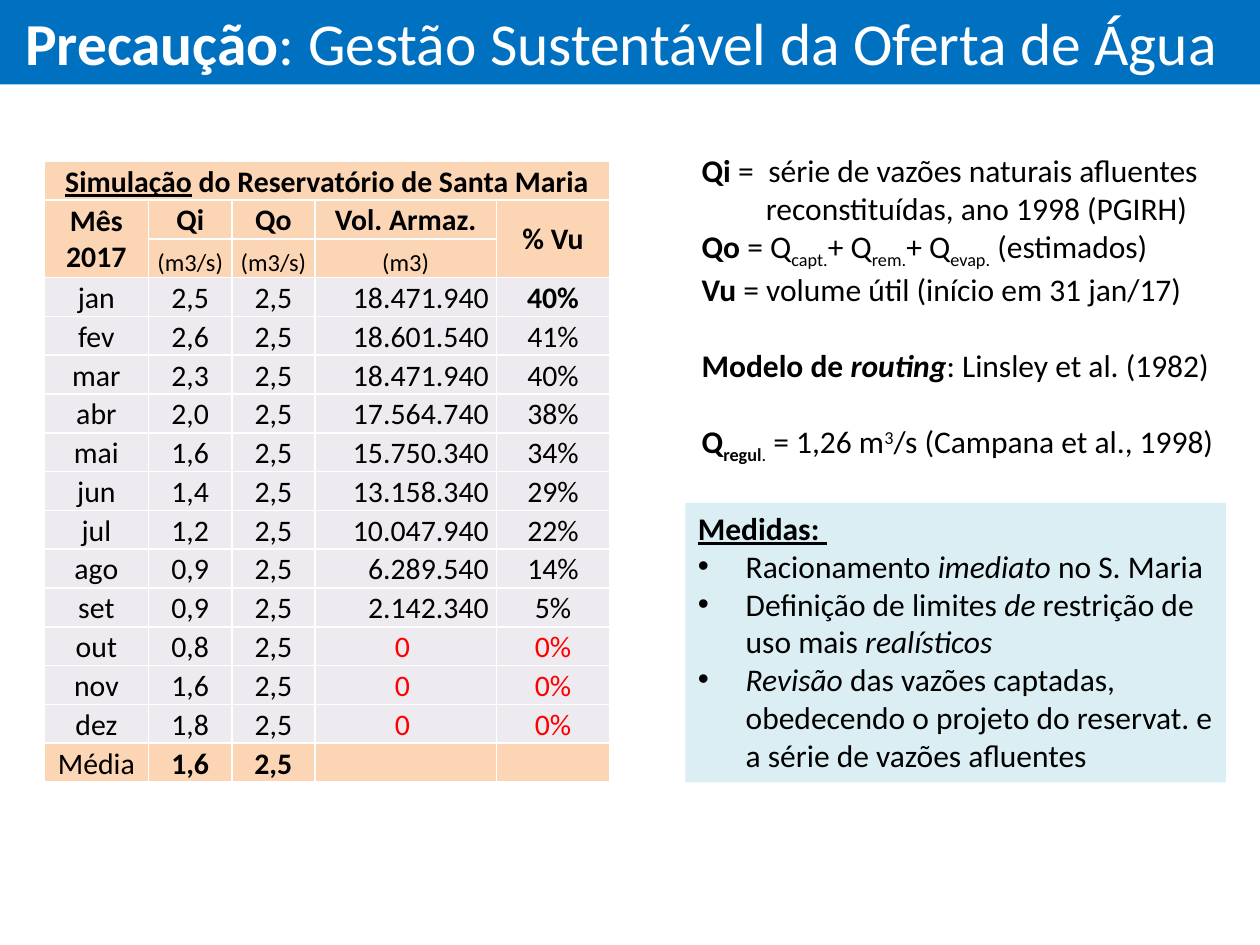
"""Build the slide on sustainable management of the water supply."""
from lxml.etree import SubElement
from pptx import Presentation
from pptx.dml.color import RGBColor
from pptx.enum.shapes import MSO_SHAPE
from pptx.enum.text import MSO_ANCHOR, PP_ALIGN
from pptx.oxml.ns import qn
from pptx.util import Inches, Pt

FONT = "Calibri"
COLORS = {"title": "0070C0", "head": "FCD5B5", "body": "EDEAF0", "measures": "DBEEF4",
          "white": "FFFFFF", "black": "000000", "red": "FF0000"}
BASELINES = {"v": "-25000", "^": "30000"}

# Run styles: b bold, i italic, u underline, v subscript, ^ superscript
TITLE = [("Precaução", "b"), (": Gestão Sustentável da Oferta de Água", "")]
NOTES = [
    {"runs": [("Qi ", "b"), ("=\tsérie de vazões naturais afluentes", "")],
     "margin": 0.53, "indent": -0.53},
    {"runs": [("reconstituídas, ano 1998 (PGIRH)", "")], "margin": 0.51},
    {"runs": [("Qo ", "b"), ("= Q", ""), ("capt.", "v"), ("+ Q", ""), ("rem.", "v"),
              ("+ Q", ""), ("evap.", "v"), (" (estimados)", "")]},
    {"runs": [("Vu", "b"), (" = volume útil (início em 31 jan/17)", "")]},
    {"runs": [("Modelo de ", "b"), ("routing", "bi"), (": Linsley et al. (1982)", "")],
     "before": 22},
    {"runs": [("Q", "b"), ("regul", "bv"), (".", "v"), (" = 1,26 m", ""), ("3", "^"),
              ("/s (Campana et al., 1998)", "")], "before": 22},
]
MEASURES_HEADING = [("Medidas: ", "bu")]
MEASURES = [
    [("Racionamento ", ""), ("imediato ", "i"), ("no S. Maria", "")],
    [("Definição de limites ", ""), ("de ", "i"), ("restrição de uso mais ", ""),
     ("realísticos", "i")],
    [("Revisão", "i"), (" das vazões captadas, obedecendo o projeto do reservat. e "
                        "a série de vazões afluentes", "")],
]
TABLE_TITLE = [("Simulação", "bu"), (" do Reservatório de Santa Maria", "b")]
HEADINGS = ["Mês 2017", "Qi", "Qo", "Vol. Armaz.", "% Vu"]
UNITS = ["", "(m3/s)", "(m3/s)", "(m3)", ""]
OUTFLOW = "2,5"
MONTHS = [
    ("jan", "2,5", "18.471.940", "40%"), ("fev", "2,6", "18.601.540", "41%"),
    ("mar", "2,3", "18.471.940", "40%"), ("abr", "2,0", "17.564.740", "38%"),
    ("mai", "1,6", "15.750.340", "34%"), ("jun", "1,4", "13.158.340", "29%"),
    ("jul", "1,2", "10.047.940", "22%"), ("ago", "0,9", "6.289.540", "14%"),
    ("set", "0,9", "2.142.340", "5%"), ("out", "0,8", "0", "0%"),
    ("nov", "1,6", "0", "0%"), ("dez", "1,8", "0", "0%"),
]
AVERAGES = ["Média", "1,6", OUTFLOW, "", ""]
COL_WIDTHS = [0.83, 0.66, 0.66, 1.44, 0.9]
TABLE_BOX = (0.35, 1.28, 4.49, 4.93)


def rgb(name):
    return RGBColor.from_string(COLORS[name])


def write(p, runs, size, color="black", align=PP_ALIGN.LEFT, margin=0, indent=0, before=0):
    p.alignment = align
    p.space_before = Pt(before)
    pPr = p._p.get_or_add_pPr()
    pPr.set("marL", str(Inches(margin)))
    pPr.set("indent", str(Inches(indent)))
    for text, style in runs:
        r = p.add_run()
        r.text = text
        f = r.font
        f.name, f.size, f.color.rgb = FONT, Pt(size), rgb(color)
        f.bold, f.italic, f.underline = (key in style for key in "biu")
        for key, baseline in BASELINES.items():
            if key in style:
                r._r.get_or_add_rPr().set("baseline", baseline)


def add_panel(s, box, fill):
    sp = s.shapes.add_shape(MSO_SHAPE.RECTANGLE, *map(Inches, box))
    sp.shadow.inherit = False
    sp.fill.solid()
    sp.fill.fore_color.rgb = rgb(fill)
    sp.line.fill.background()
    tf = sp.text_frame
    tf.word_wrap = True
    tf.vertical_anchor = MSO_ANCHOR.TOP
    return tf


def next_paragraph(tf, i):
    return tf.add_paragraph() if i else tf.paragraphs[0]


def style_cell(cell, fill):
    cell.margin_left = cell.margin_right = cell.margin_top = Inches(0.01)
    cell.margin_bottom = 0
    cell.vertical_anchor = MSO_ANCHOR.BOTTOM
    tcPr = cell._tc.get_or_add_tcPr()
    for side in ("lnL", "lnR", "lnT", "lnB"):
        ln = SubElement(tcPr, qn(f"a:{side}"), w=str(Pt(1)))
        SubElement(SubElement(ln, qn("a:solidFill")), qn("a:srgbClr"), val=COLORS["white"])
    cell.fill.solid()
    cell.fill.fore_color.rgb = rgb(fill)


def write_cell(cell, text, size=17, style="", **options):
    options.setdefault("align", PP_ALIGN.CENTER)
    write(cell.text_frame.paragraphs[0], [(text, style)], size, **options)


def add_simulation(s):
    n_rows = len(MONTHS) + 4
    tbl = s.shapes.add_table(n_rows, len(COL_WIDTHS), *map(Inches, TABLE_BOX)).table
    tbl.first_row = tbl.horz_banding = False
    for col, width in zip(tbl.columns, COL_WIDTHS):
        col.width = Inches(width)
    for i, row in enumerate(tbl.rows):
        row.height = Inches(TABLE_BOX[3] / n_rows)
        for cell in row.cells:
            style_cell(cell, "body" if 3 <= i < n_rows - 1 else "head")

    tbl.cell(0, 0).merge(tbl.cell(0, 4))
    write(tbl.cell(0, 0).text_frame.paragraphs[0], TABLE_TITLE, 17, align=PP_ALIGN.CENTER)
    for j, (heading, unit) in enumerate(zip(HEADINGS, UNITS)):
        cell = tbl.cell(1, j)
        write_cell(cell, heading, style="b")
        if unit:
            write_cell(tbl.cell(2, j), unit, 14)
        else:
            cell.merge(tbl.cell(2, j))
            cell.vertical_anchor = MSO_ANCHOR.MIDDLE

    for i, (month, inflow, volume, share) in enumerate(MONTHS, 3):
        empty = volume == "0"
        color = "red" if empty else "black"
        for j, text in enumerate((month, inflow, OUTFLOW)):
            write_cell(tbl.cell(i, j), text)
        tbl.cell(i, 3).margin_right = Inches(0.06)
        write_cell(tbl.cell(i, 3), volume, color=color,
                   align=PP_ALIGN.CENTER if empty else PP_ALIGN.RIGHT)
        write_cell(tbl.cell(i, 4), share, style="b" if i == 3 else "", color=color)

    for j, text in enumerate(AVERAGES):
        write_cell(tbl.cell(n_rows - 1, j), text, style="b" if j else "")


def main():
    prs = Presentation()
    prs.slide_width, prs.slide_height = Inches(10), Inches(7.5)
    s = prs.slides.add_slide(prs.slide_layouts[6])

    tf = add_panel(s, (0, 0, 10, 0.67), "title")
    tf.margin_left = Inches(0.2)
    write(tf.paragraphs[0], TITLE, 34, "white")

    tf = s.shapes.add_textbox(*map(Inches, (5.47, 1.15, 4.41, 2.79))).text_frame
    tf.word_wrap = True
    for i, note in enumerate(NOTES):
        write(next_paragraph(tf, i), size=18, **note)

    add_simulation(s)

    tf = add_panel(s, (5.44, 3.99, 4.29, 2.22), "measures")
    write(tf.paragraphs[0], MEASURES_HEADING, 18)
    for i, runs in enumerate(MEASURES, 1):
        p = next_paragraph(tf, i)
        write(p, runs, 18, margin=0.38, indent=-0.38)
        pPr = p._p.get_or_add_pPr()
        SubElement(pPr, qn("a:buFont"), typeface="Arial")
        SubElement(pPr, qn("a:buChar"), char="•")

    prs.save("out.pptx")


if __name__ == "__main__":
    main()
